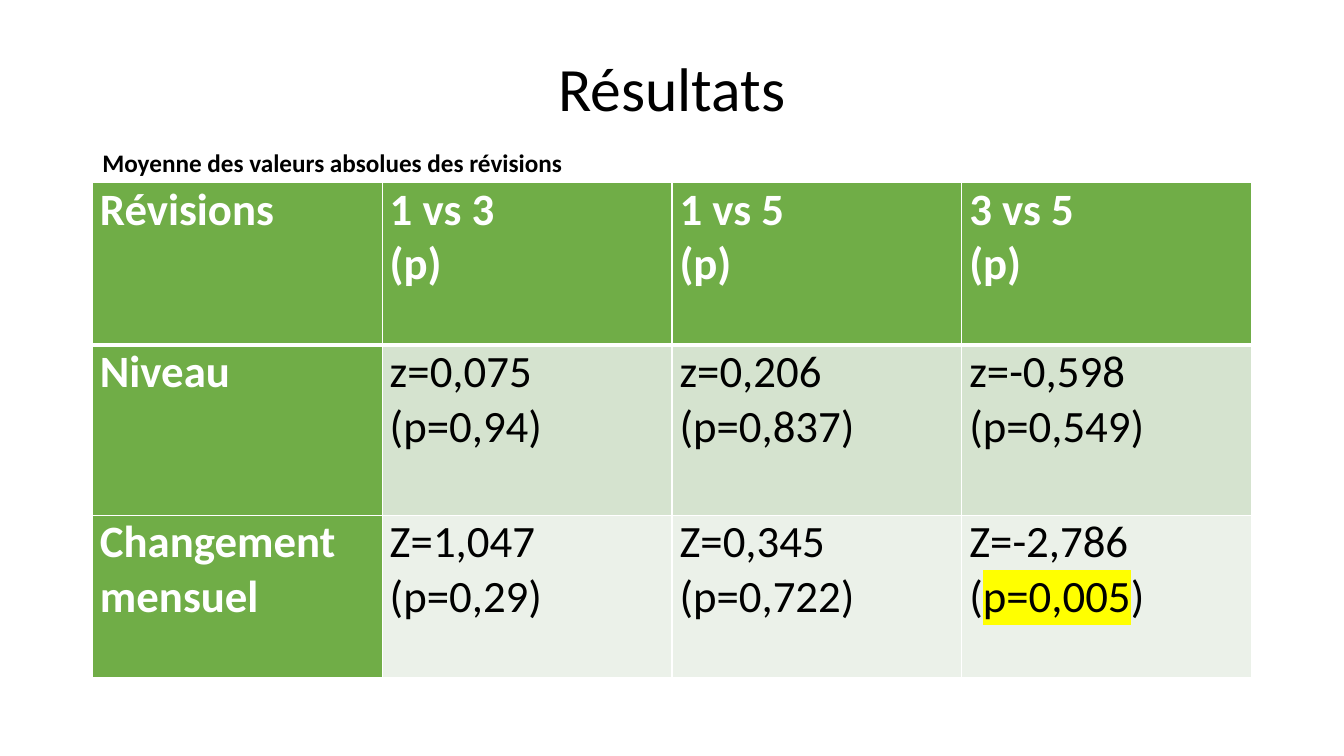
from lxml.etree import SubElement
from pptx import Presentation
from pptx.dml.color import RGBColor
from pptx.enum.text import MSO_ANCHOR, MSO_AUTO_SIZE, PP_ALIGN
from pptx.oxml.ns import qn
from pptx.util import Cm, Pt

WHITE = RGBColor(0xFF, 0xFF, 0xFF)
BLACK = RGBColor(0x00, 0x00, 0x00)
GREEN = RGBColor(0x70, 0xAD, 0x47)
BANDS = [RGBColor(0xD5, 0xE3, 0xCF), RGBColor(0xEB, 0xF1, 0xE9)]
YELLOW = RGBColor(0xFF, 0xFF, 0x00)

LEFT, WIDTH = Cm(2.33), Cm(29.21)
ROW_HEIGHTS = [Cm(4.09), Cm(4.29), Cm(4.09)]
SIGNIFICANT = "p=0,005"
ROWS = [
    ["Révisions", "1 vs 3\n(p)", "1 vs 5\n(p)", "3 vs 5\n(p)"],
    ["Niveau", "z=0,075\n(p=0,94)", "z=0,206\n(p=0,837)", "z=-0,598\n(p=0,549)"],
    ["Changement mensuel", "Z=1,047\n(p=0,29)", "Z=0,345\n(p=0,722)",
     "Z=-2,786\n(p=0,005)"],
]


def set_font(p, size, color, bold=False):
    p.font.name = "Calibri"
    p.font.size = Pt(size)
    p.font.bold = bold
    p.font.color.rgb = color


def add_title(slide, left, top, width, height):
    sp = slide.shapes.title
    sp.left, sp.top, sp.width, sp.height = left, top, width, height
    tf = sp.text_frame
    tf.text = "Résultats"
    tf.vertical_anchor = MSO_ANCHOR.MIDDLE
    p = tf.paragraphs[0]
    p.alignment = PP_ALIGN.CENTER
    p.line_spacing = 0.9
    set_font(p, 44, BLACK)


def add_caption(slide, left, top, width, height):
    tf = slide.shapes.add_textbox(left, top, width, height).text_frame
    tf.word_wrap = False
    tf.auto_size = MSO_AUTO_SIZE.SHAPE_TO_FIT_TEXT
    tf.text = "Moyenne des valeurs absolues des révisions"
    set_font(tf.paragraphs[0], 18, BLACK, bold=True)


def set_borders(cell, top, bottom):
    """Draw white cell borders, 1 pt wide at the sides."""
    tcPr = cell._tc.get_or_add_tcPr()
    for side, width in (("L", 1), ("R", 1), ("T", top), ("B", bottom)):
        ln = SubElement(tcPr, qn(f"a:ln{side}"), w=str(Pt(width)))
        fill = SubElement(ln, qn("a:solidFill"))
        SubElement(fill, qn("a:srgbClr"), val=str(WHITE))


def write_line(p, line):
    """Write one line, highlighting the significant p-value."""
    before, match, after = line.partition(SIGNIFICANT)
    for text in filter(None, (before, match, after)):
        r = p.add_run()
        r.text = text
        if text == SIGNIFICANT:
            highlight = SubElement(r._r.get_or_add_rPr(), qn("a:highlight"))
            SubElement(highlight, qn("a:srgbClr"), val=str(YELLOW))


def fill_cell(cell, text, fill, color, bold):
    cell.margin_left = cell.margin_right = Cm(0.19)
    cell.margin_top = cell.margin_bottom = 0
    cell.fill.solid()
    cell.fill.fore_color.rgb = fill
    tf = cell.text_frame
    for i, line in enumerate(text.split("\n")):
        p = tf.add_paragraph() if i else tf.paragraphs[0]
        p.alignment = PP_ALIGN.JUSTIFY
        write_line(p, line)
        set_font(p, 32, color, bold)


def add_results_table(slide, left, top, width):
    cols = len(ROWS[0])
    table = slide.shapes.add_table(
        len(ROWS), cols, left, top, width, sum(ROW_HEIGHTS)).table
    table.first_row = table.horz_banding = False
    for column in table.columns:
        column.width = width // cols
    for i, row in enumerate(ROWS):
        table.rows[i].height = ROW_HEIGHTS[i]
        for j, text in enumerate(row):
            cell = table.cell(i, j)
            header = i == 0 or j == 0
            set_borders(cell, top=3 if i == 1 else 1, bottom=3 if i == 0 else 1)
            fill_cell(cell, text, GREEN if header else BANDS[i - 1],
                      WHITE if header else BLACK, header)


def main():
    prs = Presentation()
    prs.slide_width, prs.slide_height = Cm(33.87), Cm(19.05)
    slide = prs.slides.add_slide(prs.slide_layouts[5])
    add_title(slide, LEFT, Cm(1.02), WIDTH, Cm(2.57))
    add_results_table(slide, LEFT, Cm(4.6), WIDTH)
    add_caption(slide, LEFT, Cm(3.58), Cm(12.19), Cm(1.02))
    prs.save("out.pptx")


if __name__ == "__main__":
    main()
